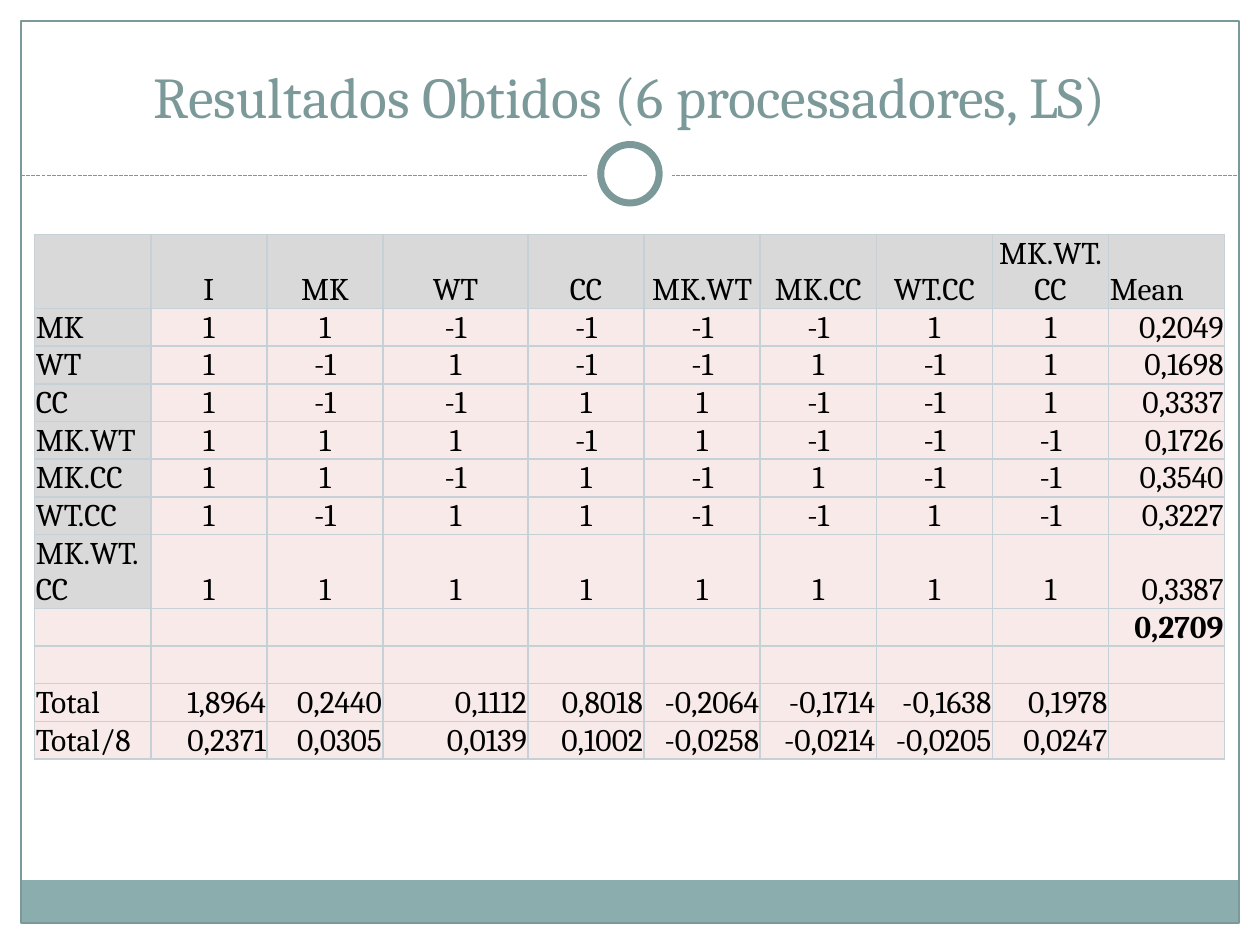
from dataclasses import dataclass
from math import prod

from lxml.etree import SubElement as Sub
from pptx import Presentation
from pptx.dml.color import RGBColor as RGB
from pptx.enum.dml import MSO_LINE as Dash
from pptx.enum.shapes import MSO_CONNECTOR as Link, MSO_SHAPE as Kind
from pptx.enum.text import MSO_ANCHOR as Anchor, PP_ALIGN as Align
from pptx.oxml.ns import qn
from pptx.util import Pt


@dataclass(frozen=True)
class Theme:
    font: str = "Cambria"
    head: int = 33
    body: int = 18
    white: str = "FFFFFF"
    black: str = "000000"
    teal: str = "7C999A"
    band: str = "8CADAE"
    label: str = "D9D9D9"
    cell: str = "F7EAE9"
    grid: str = "C5D1D7"


def write(frame, text, font, size, color, align=Align.LEFT, bold=False):
    frame.word_wrap = True
    para = frame.paragraphs[0]
    para.alignment = align
    if not text:
        # An empty cell keeps the type of its neighbours
        end = Sub(para._p, qn("a:endParaRPr"), sz=str(size * 100))
        Sub(end, qn("a:latin"), typeface=font)
        return
    run = para.add_run()
    run.text = text
    run.font.name = font
    run.font.size = Pt(size)
    run.font.bold = bold
    run.font.color.rgb = RGB.from_string(color)


class Page:
    def __init__(self, deck, theme):
        self.theme = theme
        self.slide = deck.slides.add_slide(deck.slide_layouts[5])
        self.shapes = self.slide.shapes

    def shape(self, kind, x, y, w, h, fill=None, line=None, width=0.75):
        item = self.shapes.add_shape(kind, Pt(x), Pt(y), Pt(w), Pt(h))
        item.shadow.inherit = False
        if fill:
            item.fill.solid()
            item.fill.fore_color.rgb = RGB.from_string(fill)
        else:
            item.fill.background()
        if line:
            item.line.color.rgb = RGB.from_string(line)
            item.line.width = Pt(width)
        else:
            item.line.fill.background()

    def rule(self, x, y, end):
        item = self.shapes.add_connector(
            Link.STRAIGHT, Pt(x), Pt(y), Pt(end), Pt(y))
        item.line.color.rgb = RGB.from_string(self.theme.teal)
        item.line.width = Pt(0.75)
        item.line.dash_style = Dash.SQUARE_DOT
        Sub(item._element.spPr, qn("a:effectLst"))

    def title(self, text, x, y, w, h):
        look, item = self.theme, self.shapes.title
        item.left, item.top, item.width, item.height = map(Pt, (x, y, w, h))
        item.text_frame.vertical_anchor = Anchor.BOTTOM
        write(item.text_frame, text, look.font, look.head, look.teal,
              Align.CENTER)
        # Lift the title above the frame shapes
        item._element.getparent().append(item._element)

    def border(self, cell):
        props = cell._tc.get_or_add_tcPr()
        for side in "LRTB":
            line = Sub(props, qn(f"a:ln{side}"), w=str(Pt(1)))
            fill = Sub(line, qn("a:solidFill"))
            Sub(fill, qn("a:srgbClr"), val=self.theme.grid)

    def cell(self, cell, text, fill, align, bold):
        look = self.theme
        cell.margin_left = cell.margin_right = cell.margin_top = Pt(0.7)
        cell.margin_bottom = 0
        cell.vertical_anchor = Anchor.BOTTOM
        self.border(cell)
        cell.fill.solid()
        cell.fill.fore_color.rgb = RGB.from_string(fill)
        write(cell.text_frame, text, look.font, look.body, look.black,
              align, bold)

    def table(self, rows, x, y, wides, highs, style):
        grid = self.shapes.add_table(
            len(rows), len(wides), Pt(x), Pt(y),
            Pt(sum(wides)), Pt(sum(highs))).table
        grid.first_row = grid.horz_banding = False
        for col, wide in zip(grid.columns, wides):
            col.width = Pt(wide)
        for row, high in zip(grid.rows, highs):
            row.height = Pt(high)
        for r, row in enumerate(rows):
            for c, text in enumerate(row):
                self.cell(grid.cell(r, c), text, *style(r, c))


# Table data: signs follow from the factors named in each row and column
BASE = ["MK", "WT", "CC"]
TERMS = BASE + ["MK.WT", "MK.CC", "WT.CC", "MK.WT.CC"]
MEANS = ["0,2049", "0,1698", "0,3337", "0,1726", "0,3540", "0,3227", "0,3387"]
TOTAL = ["1,8964", "0,2440", "0,1112", "0,8018",
         "-0,2064", "-0,1714", "-0,1638", "0,1978"]
SHARE = ["0,2371", "0,0305", "0,0139", "0,1002",
         "-0,0258", "-0,0214", "-0,0205", "0,0247"]
LAST = len(TERMS)
MEAN = LAST + 2


def sign(row, col):
    have = row.split(".")
    return str(prod(1 if part in have else -1 for part in col.split(".")))


def build_rows():
    rows = [["", "I", *TERMS, "Mean"]]
    for term, mean in zip(TERMS, MEANS):
        rows.append([term, "1", *(sign(term, col) for col in TERMS), mean])
    rows.append([""] * MEAN + ["0,2709"])
    rows.append([""] * (MEAN + 1))
    rows.append(["Total", *TOTAL, ""])
    rows.append(["Total/8", *SHARE, ""])
    return rows


def main():
    deck = Presentation()
    deck.slide_width, deck.slide_height = Pt(720), Pt(540)
    look = Theme()
    page = Page(deck, look)

    # Margins, bottom band and outer frame
    for box in ((0, 0, 720, 109.5), (0, 0, 12, 540), (708, 0, 12, 540)):
        page.shape(Kind.RECTANGLE, *box, fill=look.white)
    page.shape(Kind.RECTANGLE, 11.75, 503, 696, 24.5, fill=look.band)
    page.shape(Kind.RECTANGLE, 12, 12, 696, 515.5, line=look.teal)

    # Dashed rule with the ring at its middle
    page.rule(12, 100.5, 708)
    page.shape(Kind.OVAL, 336, 75.3, 48, 48, fill=look.white)
    page.shape(Kind.OVAL, 343.3, 82.6, 33.4, 33.4, fill=look.white,
               line=look.teal, width=4)

    page.title("Resultados Obtidos (6 processadores, LS)", 24, 18, 672, 60)

    # Results table
    def style(r, c):
        named = r == 0 or (c == 0 and r <= LAST)
        if c == 0 or (r == 0 and c == MEAN):
            align = Align.LEFT
        elif c == MEAN or r > LAST:
            align = Align.RIGHT
        else:
            align = Align.CENTER
        bold = r == LAST + 1 and c == MEAN
        return look.label if named else look.cell, align, bold

    rows = build_rows()
    wides = [82.8 if c == 3 else 66.36 for c in range(MEAN + 1)]
    highs = [42.3 if r in (0, LAST) else 21.54 for r in range(len(rows))]
    page.table(rows, 19.8, 134, wides, highs, style)

    deck.save("out.pptx")


if __name__ == "__main__":
    main()
